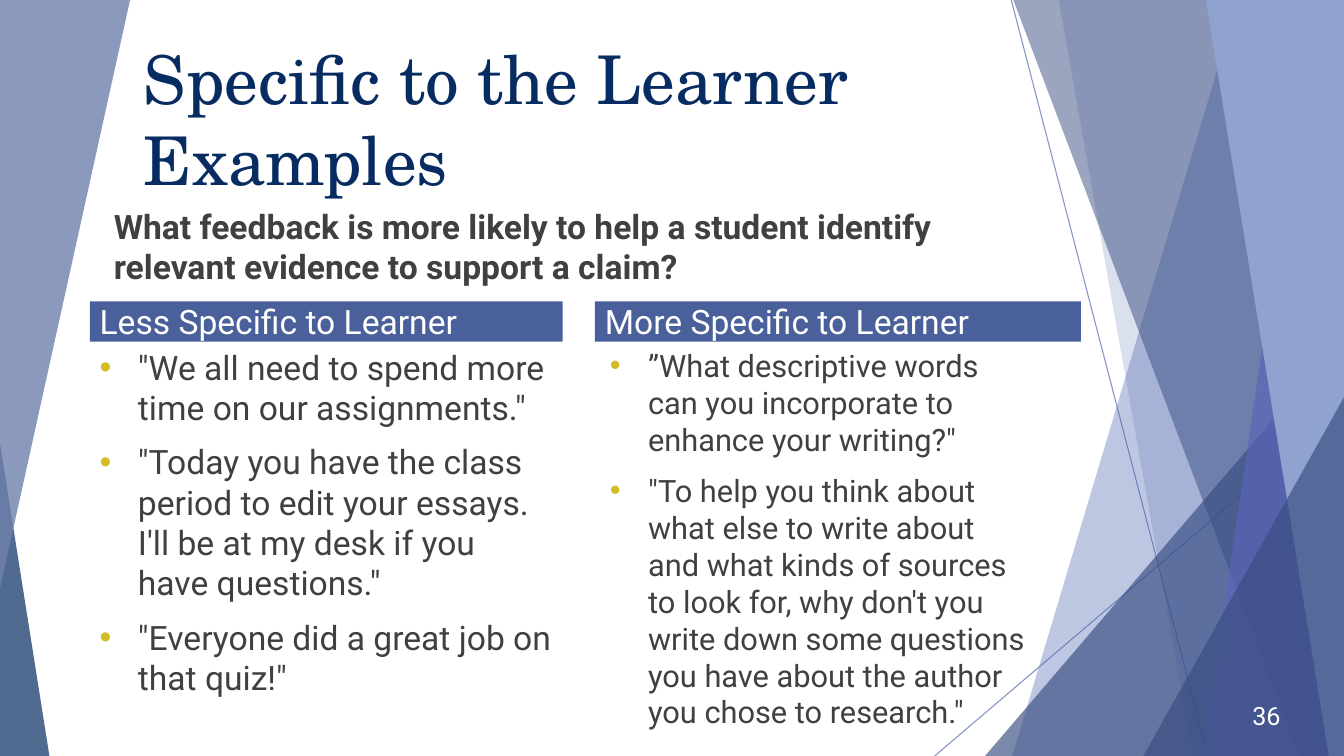
from lxml import etree
from pptx import Presentation
from pptx.dml.color import RGBColor
from pptx.enum.shapes import MSO_CONNECTOR, MSO_SHAPE
from pptx.enum.text import MSO_ANCHOR, PP_ALIGN
from pptx.oxml.ns import qn
from pptx.util import Inches, Pt

TRIANGLE, RECTANGLE = MSO_SHAPE.ISOSCELES_TRIANGLE, MSO_SHAPE.RECTANGLE
STRAIGHT = MSO_CONNECTOR.STRAIGHT
TOP, MIDDLE = MSO_ANCHOR.TOP, MSO_ANCHOR.MIDDLE
LEFT, RIGHT = PP_ALIGN.LEFT, PP_ALIGN.RIGHT

WHITE = RGBColor(0xFF, 0xFF, 0xFF)
NAVY = RGBColor(0x07, 0x2C, 0x62)
BLUE = RGBColor(0x4A, 0x66, 0xAC)
DARK_BLUE = RGBColor(0x38, 0x4C, 0x81)
VIOLET = RGBColor(0x5C, 0x64, 0xB7)
PALE_BLUE = RGBColor(0x90, 0xA2, 0xCF)
GREY_BLUE = RGBColor(0x6F, 0x81, 0xAC)
HEADING_BLUE = RGBColor(0x4A, 0x60, 0x9A)
TEXT_GREY = RGBColor(0x40, 0x40, 0x40)
GOLD = RGBColor(0xD2, 0xBD, 0x24)

BODY_FONT, TITLE_FONT = "Roboto", "TeX Gyre Schola"
SLIDE_W, SLIDE_H = 13.33, 7.5
HEADING_TOP, HEADING_H = 2.99, 0.4
HANGING = 0.38

TITLE = "Specific to the Learner Examples"
QUESTION = ("What feedback is more likely to help a student identify "
            "relevant evidence to support a claim?")
COLUMNS = [
    {"heading": "Less Specific to Learner", "heading_x": (0.89, 4.69),
     "quotes_x": (0.89, 4.69), "size": 24,
     "quotes": [
         '"We all need to spend more time on our assignments."',
         '"Today you have the class period to edit your essays. '
         'I\'ll be at my desk if you have questions."',
         '"Everyone did a great job on that quiz!"']},
    {"heading": "More Specific to Learner", "heading_x": (5.9, 4.82),
     "quotes_x": (5.95, 4.39), "size": 22,
     "quotes": [
         '”What descriptive words can you incorporate to enhance your writing?"',
         '"To help you think about what else to write about and what kinds of '
         'sources to look for, why don\'t you write down some questions you '
         'have about the author you chose to research."']},
]
PAGE_NUMBER = "36"

RAYS = [((10.03, 0), (11.98, SLIDE_H)), ((SLIDE_W, 4.04), (9.27, SLIDE_H))]
# (kind, geometry, colour, opacity)
FACETS = [
    ("band", (12.28, 10.04), BLUE, 36),
    ("band", (10.5, 11.83), BLUE, 20),
    ("peak", (9.77, 3.34, 3.56, 4.16, 1), DARK_BLUE, 66),
    ("band", (10.05, 12.89), DARK_BLUE, 50),
    ("band", (13.03, 11.92), VIOLET, 70),
    ("band", (11.96, 13.18), PALE_BLUE, 100),
    ("peak", (11.34, 3.94, 1.99, 3.56, 1), DARK_BLUE, 66),
    ("peak", (0, 4.4, 0.49, 3.1, 0), NAVY, 70),
    ("hanging", (0, 0, 1.29, 5.84, 0), GREY_BLUE, 80),
]

prs = Presentation()
prs.slide_width, prs.slide_height = Inches(SLIDE_W), Inches(SLIDE_H)
slide = prs.slides.add_slide(prs.slide_layouts[6])
shapes = slide.shapes


def set_opacity(part, percent):
    for colour in part.element.spPr.iter(qn("a:srgbClr")):
        etree.SubElement(colour, qn("a:alpha")).set("val", str(percent * 1000))


def paint(part, colour, opacity=100):
    part.shadow.inherit = False
    part.fill.solid()
    part.fill.fore_color.rgb = colour
    part.line.fill.background()
    if opacity < 100:
        set_opacity(part, opacity)


def add_ray(start, end):
    ray = shapes.add_connector(STRAIGHT, *map(Inches, start + end))
    ray.line.color.rgb = BLUE
    ray.line.width = Pt(0.75)
    set_opacity(ray, 70)
    etree.SubElement(ray.element.spPr, qn("a:effectLst"))


def add_facet(kind, geometry, colour, opacity):
    if kind == "band":
        top_x, bottom_x = geometry
        outline = shapes.build_freeform(Inches(top_x), 0)
        corners = [(SLIDE_W, 0), (SLIDE_W, SLIDE_H), (bottom_x, SLIDE_H)]
        outline.add_line_segments([(Inches(x), Inches(y)) for x, y in corners])
        facet = outline.convert_to_shape()
    else:
        *box, apex = geometry
        facet = shapes.add_shape(TRIANGLE, *map(Inches, box))
        facet.adjustments[0] = apex
        if kind == "hanging":
            facet.element.spPr.find(qn("a:xfrm")).set("flipV", "1")
    paint(facet, colour, opacity)


def add_bullet(paragraph):
    props = paragraph._p.get_or_add_pPr()
    props.set("marL", str(Inches(HANGING)))
    props.set("indent", str(-Inches(HANGING)))
    colour = etree.SubElement(props, qn("a:buClr"))
    etree.SubElement(colour, qn("a:srgbClr")).set("val", str(GOLD))
    etree.SubElement(props, qn("a:buFont")).set("typeface", "Arial")
    etree.SubElement(props, qn("a:buChar")).set("char", "•")


def add_text(lines, box, size=24, font=BODY_FONT, colour=TEXT_GREY, bold=False,
             before=0, align=LEFT, anchor=TOP, fill=None, bullets=False):
    place = [Inches(v) for v in box]
    if fill is None:
        holder = shapes.add_textbox(*place)
    else:
        holder = shapes.add_shape(RECTANGLE, *place)
        paint(holder, fill)
    frame = holder.text_frame
    frame.word_wrap = True
    frame.vertical_anchor = anchor
    for i, line in enumerate(lines):
        paragraph = frame.paragraphs[0] if i == 0 else frame.add_paragraph()
        paragraph.alignment = align
        paragraph.space_before = Pt(before)
        if bullets:
            add_bullet(paragraph)
        run = paragraph.add_run()
        run.text = line
        run.font.name, run.font.size, run.font.bold = font, Pt(size), bold
        run.font.color.rgb = colour


for ray_ends in RAYS:
    add_ray(*ray_ends)
for facet_values in FACETS:
    add_facet(*facet_values)

add_text([TITLE], (1.33, 0.32, 9.83, 1.44), size=48, font=TITLE_FONT, colour=NAVY)
add_text([QUESTION], (1.03, 1.99, 9.31, 1.06), bold=True, before=10)
for column in COLUMNS:
    x, width = column["heading_x"]
    add_text([column["heading"]], (x, HEADING_TOP, width, HEADING_H), colour=WHITE,
             before=10, anchor=MIDDLE, fill=HEADING_BLUE)
    x, width = column["quotes_x"]
    add_text(column["quotes"], (x, HEADING_TOP + HEADING_H, width, 2.07),
             size=column["size"], before=10, bullets=True)
add_text([PAGE_NUMBER], (12.05, 6.9, 0.75, 0.4), size=18, colour=WHITE, align=RIGHT)

prs.save("out.pptx")
